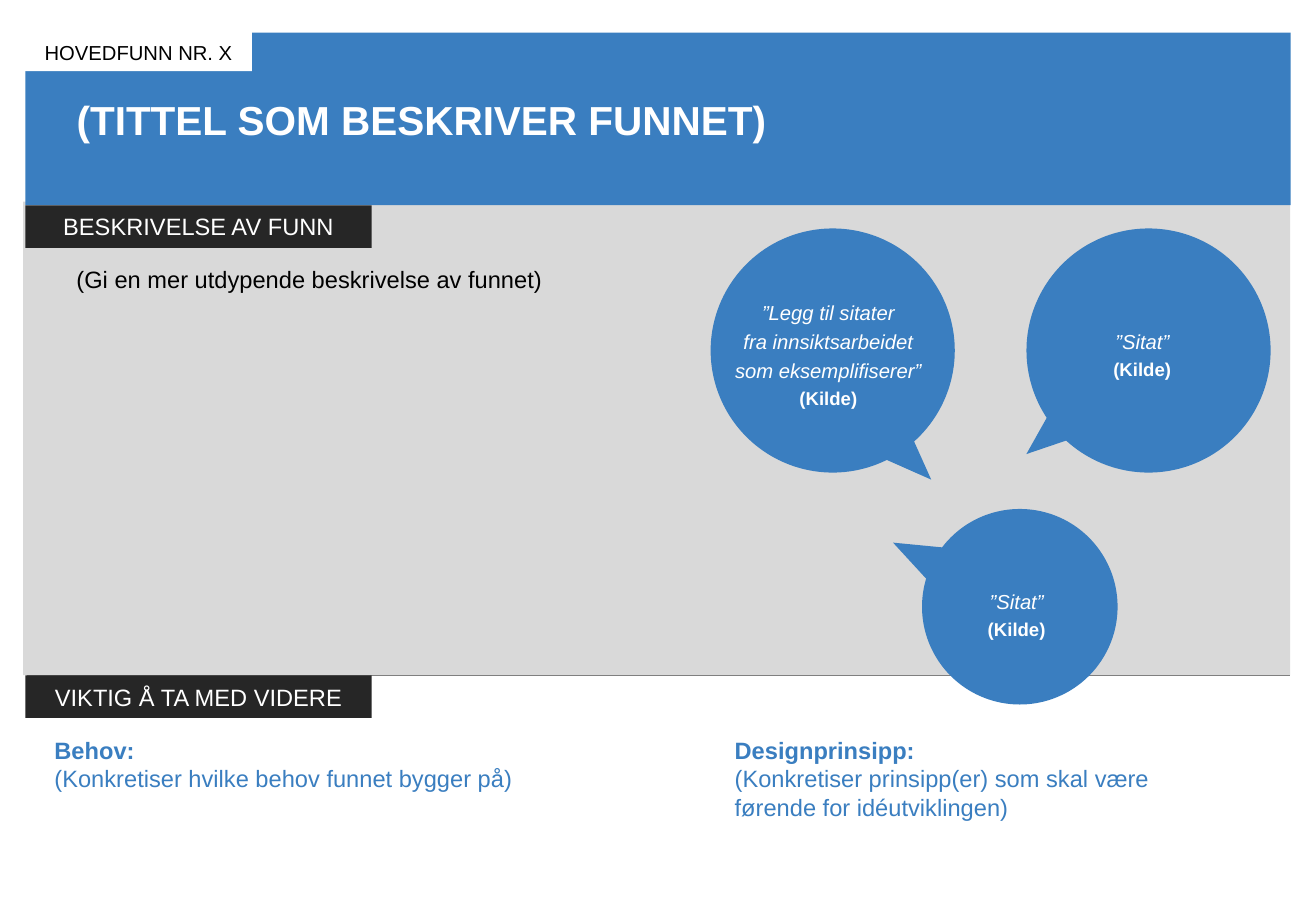
from lxml.etree import SubElement
from pptx import Presentation
from pptx.dml.color import RGBColor
from pptx.enum.shapes import MSO_CONNECTOR as Connector, MSO_SHAPE as Preset
from pptx.enum.text import MSO_ANCHOR as Anchor, MSO_AUTO_SIZE as AutoSize, PP_ALIGN as Align
from pptx.oxml.ns import qn
from pptx.util import Pt

BLUE, DARK, GREY, WHITE, BLACK = "3A7EC0", "262626", "D9D9D9", "FFFFFF", "000000"


def color(value):
    return RGBColor.from_string(value)


class FindingSlide:
    """Holds the font and the current slide, and draws each kind of element."""

    def __init__(self, presentation, font="Arial"):
        self.font = font
        self.slide = presentation.slides.add_slide(presentation.slide_layouts[5])

    def fill_text(self, shape, paragraphs, align=Align.LEFT, anchor=Anchor.TOP,
                  spacing=1.0, insets=(7.2, 3.6)):
        frame = shape.text_frame
        frame.word_wrap = True
        frame.auto_size = AutoSize.NONE
        frame.vertical_anchor = anchor
        frame.margin_left = frame.margin_right = Pt(insets[0])
        frame.margin_top = frame.margin_bottom = Pt(insets[1])
        for index, (text, size, fill, bold, italic) in enumerate(paragraphs):
            paragraph = frame.add_paragraph() if index else frame.paragraphs[0]
            paragraph.alignment = align
            paragraph.line_spacing = spacing
            paragraph.space_before = Pt(0)
            run = paragraph.add_run()
            run.text = text
            run.font.name = self.font
            run.font.size = Pt(size)
            run.font.bold = bold
            run.font.italic = italic
            run.font.color.rgb = color(fill)

    def block(self, preset, box, fill, parent=None):
        shapes = (parent or self.slide).shapes
        shape = shapes.add_shape(preset, *map(Pt, box))
        shape.shadow.inherit = False
        shape.fill.solid()
        shape.fill.fore_color.rgb = color(fill)
        shape.line.fill.background()
        return shape

    def text(self, box, paragraphs, parent=None, **layout):
        shapes = (parent or self.slide).shapes
        self.fill_text(shapes.add_textbox(*map(Pt, box)), paragraphs, **layout)

    def title(self, box, text):
        title = self.slide.shapes.title
        title.left, title.top, title.width, title.height = map(Pt, box)
        self.fill_text(title, [(text, 24, WHITE, True, False)])
        title.element.getparent().append(title.element)

    def heading(self, top, text):
        shape = self.block(Preset.RECTANGLE, (15.1, top, 205.2, 25.2), DARK)
        self.fill_text(shape, [(text, 14, WHITE, False, False)], Align.CENTER,
                       Anchor.MIDDLE, insets=(4.3, 4.3))

    def rule(self, left, right, top, stroke):
        line = self.slide.shapes.add_connector(
            Connector.STRAIGHT, Pt(left), Pt(top), Pt(right), Pt(top))
        line.line.color.rgb = color(stroke)
        line.line.width = Pt(1)
        SubElement(line.element.spPr, qn("a:effectLst"))

    def bubble(self, left, top, size, tail_corner, rotation, text_box, quotes):
        group = self.slide.shapes.add_group_shape()
        self.block(Preset.OVAL, (left, top, size, size), BLUE, group)
        tail_box = (*tail_corner, size * 0.44, size * 0.395)
        tail = self.block(Preset.RIGHT_TRIANGLE, tail_box, BLUE, group)
        tail.rotation = rotation
        lines = [(quote, 12, WHITE, False, True) for quote in quotes]
        lines.append(("(Kilde)", 11, WHITE, True, False))
        self.text(text_box, lines, group, align=Align.CENTER,
                  anchor=Anchor.MIDDLE, spacing=1.2)

    def takeaway(self, box, label, text):
        self.text(box, [(label, 14, BLUE, True, False), (text, 14, BLUE, False, False)])


def main():
    presentation = Presentation()
    presentation.slide_width, presentation.slide_height = Pt(780), Pt(540)
    finding = FindingSlide(presentation)

    finding.block(Preset.RECTANGLE, (13.7, 119.5, 751, 280.8), GREY)
    finding.block(Preset.RECTANGLE, (15.1, 19.4, 750, 102.3), BLUE)
    finding.heading(121.7, "BESKRIVELSE AV FUNN")
    finding.block(Preset.RECTANGLE, (13.7, 18.7, 135.6, 23.5), WHITE)
    finding.text((19.4, 20.2, 165, 21.6), [("HOVEDFUNN NR. X", 12, BLACK, False, False)])
    finding.rule(15.8, 764.6, 400.4, "7F7F7F")
    finding.heading(400.4, "VIKTIG Å TA MED VIDERE")
    finding.title((38.2, 52.6, 694, 36), "(TITTEL SOM BESKRIVER FUNNET)")
    finding.text((38.2, 153.4, 383, 41),
                 [("(Gi en mer utdypende beskrivelse av funnet)", 14, BLACK, False, False)])

    finding.bubble(421.2, 135.4, 144.7, (502.6, 216.7), 23.9, (425.5, 171.4, 131, 75),
                   ["”Legg til sitater", "fra innsiktsarbeidet som eksemplifiserer”"])
    finding.bubble(546.5, 301.7, 115.9, (527, 324), 185.5, (561.6, 342.7, 82, 40.3),
                   ["”Sitat”"])
    finding.bubble(608.4, 135.4, 144.7, (617, 226.8), 119.3, (613.4, 188.6, 127.4, 40.3),
                   ["”Sitat”"])

    finding.takeaway((25.2, 432.7, 318, 41), "Behov:",
                     "(Konkretiser hvilke behov funnet bygger på)")
    finding.takeaway((428.4, 432.7, 296, 75), "Designprinsipp:",
                     "(Konkretiser prinsipp(er) som skal være førende for idéutviklingen)")
    presentation.save("out.pptx")


if __name__ == "__main__":
    main()
